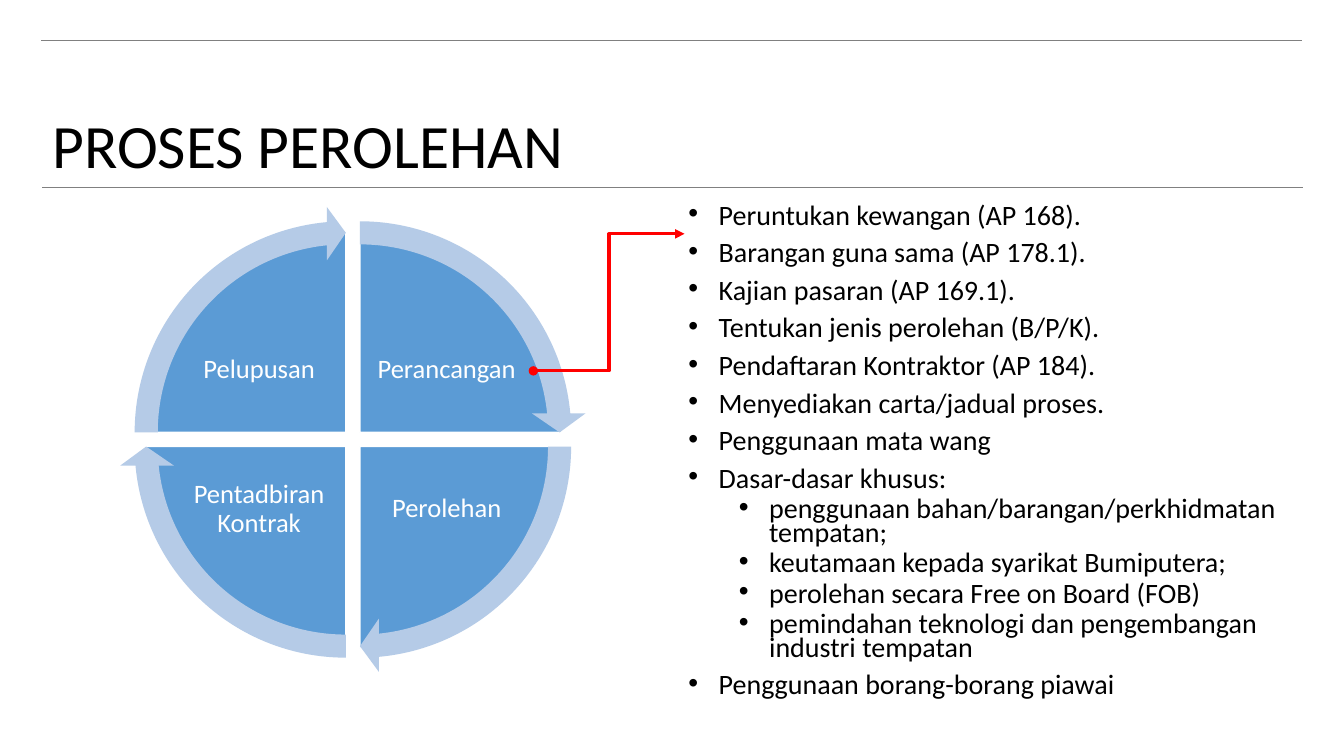
"""Build the procurement process slide: a four-part cycle beside a bulleted list."""
import pptx
import pptx.dml.color
import pptx.enum.shapes
import pptx.enum.text
import pptx.oxml
import pptx.oxml.ns
import pptx.util

Inches, Pt = pptx.util.Inches, pptx.util.Pt
Color = pptx.dml.color.RGBColor.from_string
Shape = pptx.enum.shapes.MSO_SHAPE
Connector = pptx.enum.shapes.MSO_CONNECTOR
Align = pptx.enum.text.PP_ALIGN
Anchor = pptx.enum.text.MSO_ANCHOR

TITLE = "PROSES PEROLEHAN"
QUADRANTS = [
    ("Perancangan", 1, -1),
    ("Perolehan", 1, 1),
    ("Pentadbiran Kontrak", -1, 1),
    ("Pelupusan", -1, -1),
]
BULLETS = [
    (0, "Peruntukan kewangan (AP 168)."),
    (0, "Barangan guna sama (AP 178.1)."),
    (0, "Kajian pasaran (AP 169.1)."),
    (0, "Tentukan jenis perolehan (B/P/K)."),
    (0, "Pendaftaran Kontraktor (AP 184)."),
    (0, "Menyediakan carta/jadual proses."),
    (0, "Penggunaan mata wang"),
    (0, "Dasar-dasar khusus:"),
    (1, "penggunaan bahan/barangan/perkhidmatan tempatan;"),
    (1, "keutamaan kepada syarikat Bumiputera;"),
    (1, "perolehan secara Free on Board (FOB)"),
    (1, "pemindahan teknologi dan pengembangan industri tempatan"),
    (0, "Penggunaan borang-borang piawai"),
]
RULES = [(0.42, 1.86), (0.41, 0.4)]
RULE_LENGTH = 12.5
THEME = {
    "font": "Calibri", "title": 44, "body": 20, "label": 19,
    "text": "000000", "light": "FFFFFF", "pie": "5B9BD5",
    "arrow": "B5CBE7", "rule": "808080", "pointer": "FF0000",
}
CENTER_X, CENTER_Y, HALF_GAP = 3.5, 4.36, 0.07
PIE_SIZE, ARROW_SIZE = 4, 4.49
LABEL_SIZE, LABEL_OFFSET = (1.48, 1.09), (0.93, 0.69)
QUARTER, FULL_TURN = 54, 216


def apply(target, **values):
    for name, value in values.items():
        setattr(target, name, value)


def style_font(paragraph, size, color):
    apply(paragraph.font, name=THEME["font"], size=Pt(THEME[size]))
    paragraph.font.color.rgb = Color(THEME[color])


def add_line(slide, kind, start, end, color, width):
    line = slide.shapes.add_connector(kind, *map(Inches, start + end))
    line.line.color.rgb = Color(THEME[color])
    line.line.width = Pt(width)
    pptx.oxml.ns.qn("a:effectLst")
    properties = line._element.spPr
    properties.append(properties.makeelement(pptx.oxml.ns.qn("a:effectLst"), {}))
    return line


def add_ring_part(slide, kind, size, side_x, side_y, adjustments, color):
    left = CENTER_X - size / 2 + side_x * HALF_GAP
    top = CENTER_Y - size / 2 + side_y * HALF_GAP
    shape = slide.shapes.add_shape(kind, *map(Inches, (left, top, size, size)))
    shape.shadow.inherit = False
    shape.fill.solid()
    shape.fill.fore_color.rgb = Color(THEME[color])
    for index, value in enumerate(adjustments):
        shape.adjustments[index] = value
    return shape


def add_label(slide, text, side_x, side_y):
    width, height = LABEL_SIZE
    left = CENTER_X + side_x * LABEL_OFFSET[0] - width / 2
    top = CENTER_Y + side_y * LABEL_OFFSET[1] - height / 2
    box = slide.shapes.add_textbox(*map(Inches, (left, top, width, height)))
    margins = dict.fromkeys(
        ("margin_left", "margin_top", "margin_right", "margin_bottom"), Inches(0.03))
    apply(box.text_frame, word_wrap=True, vertical_anchor=Anchor.MIDDLE, **margins)
    paragraph = box.text_frame.paragraphs[0]
    apply(paragraph, text=text, alignment=Align.CENTER, line_spacing=0.9)
    style_font(paragraph, "label", "light")


def add_cycle(slide):
    starts = [(index + 3) * QUARTER % FULL_TURN for index in range(len(QUADRANTS))]
    for start, (text, side_x, side_y) in zip(starts, QUADRANTS):
        angles = (start, (start + QUARTER) % FULL_TURN)
        pie = add_ring_part(slide, Shape.PIE, PIE_SIZE, side_x, side_y, angles, "pie")
        pie.line.color.rgb = Color(THEME["light"])
        pie.line.width = Pt(1)
        add_label(slide, text, side_x, side_y)
    for start, (text, side_x, side_y) in zip(starts, QUADRANTS):
        bends = (0.051, 3.275, start + 50.725, start, 0.059)
        arrow = add_ring_part(
            slide, Shape.CIRCULAR_ARROW, ARROW_SIZE, side_x, side_y, bends, "arrow")
        arrow.line.fill.background()


def add_bullets(slide):
    box = slide.shapes.add_textbox(*map(Inches, (6.72, 2, 6.2, 4.76)))
    frame = box.text_frame
    frame.word_wrap = True
    for index, (level, text) in enumerate(BULLETS):
        paragraph = frame.add_paragraph() if index else frame.paragraphs[0]
        space = (5 if level else 10) if index else 0
        apply(paragraph, text=text, level=level, line_spacing=0.7, space_before=Pt(space))
        properties = paragraph._p.get_or_add_pPr()
        properties.set("marL", str(Inches(0.31 + 0.5 * level)))
        properties.set("indent", str(Inches(-0.3)))
        for tag, values in (("a:buFont", {"typeface": "Arial"}), ("a:buChar", {"char": "•"})):
            properties.append(properties.makeelement(pptx.oxml.ns.qn(tag), values))
        style_font(paragraph, "body", "text")


def add_title(slide):
    title = slide.shapes.title
    apply(title, left=Inches(0.42), top=Inches(0.4), width=Inches(12.5), height=Inches(1.45))
    apply(title.text_frame, vertical_anchor=Anchor.BOTTOM, word_wrap=True,
          auto_size=pptx.enum.text.MSO_AUTO_SIZE.NONE)
    paragraph = title.text_frame.paragraphs[0]
    apply(paragraph, text=TITLE, alignment=Align.LEFT, line_spacing=0.9)
    style_font(paragraph, "title", "text")


def add_pointer(slide):
    pointer = add_line(slide, Connector.ELBOW, (5.29, 3.68), (6.79, 2.32), "pointer", 2.25)
    outline = pointer.line._get_or_add_ln()
    for tag, kind in (("a:headEnd", "oval"), ("a:tailEnd", "triangle")):
        outline.append(outline.makeelement(pptx.oxml.ns.qn(tag), {"type": kind}))


def main():
    presentation = pptx.Presentation()
    apply(presentation, slide_width=Inches(13.33), slide_height=Inches(7.5))
    slide = presentation.slides.add_slide(presentation.slide_layouts[5])
    for left, top in RULES:
        add_line(slide, Connector.STRAIGHT, (left, top), (left + RULE_LENGTH, top), "rule", 1)
    add_bullets(slide)
    add_title(slide)
    add_cycle(slide)
    add_pointer(slide)
    presentation.save("out.pptx")


if __name__ == "__main__":
    main()
